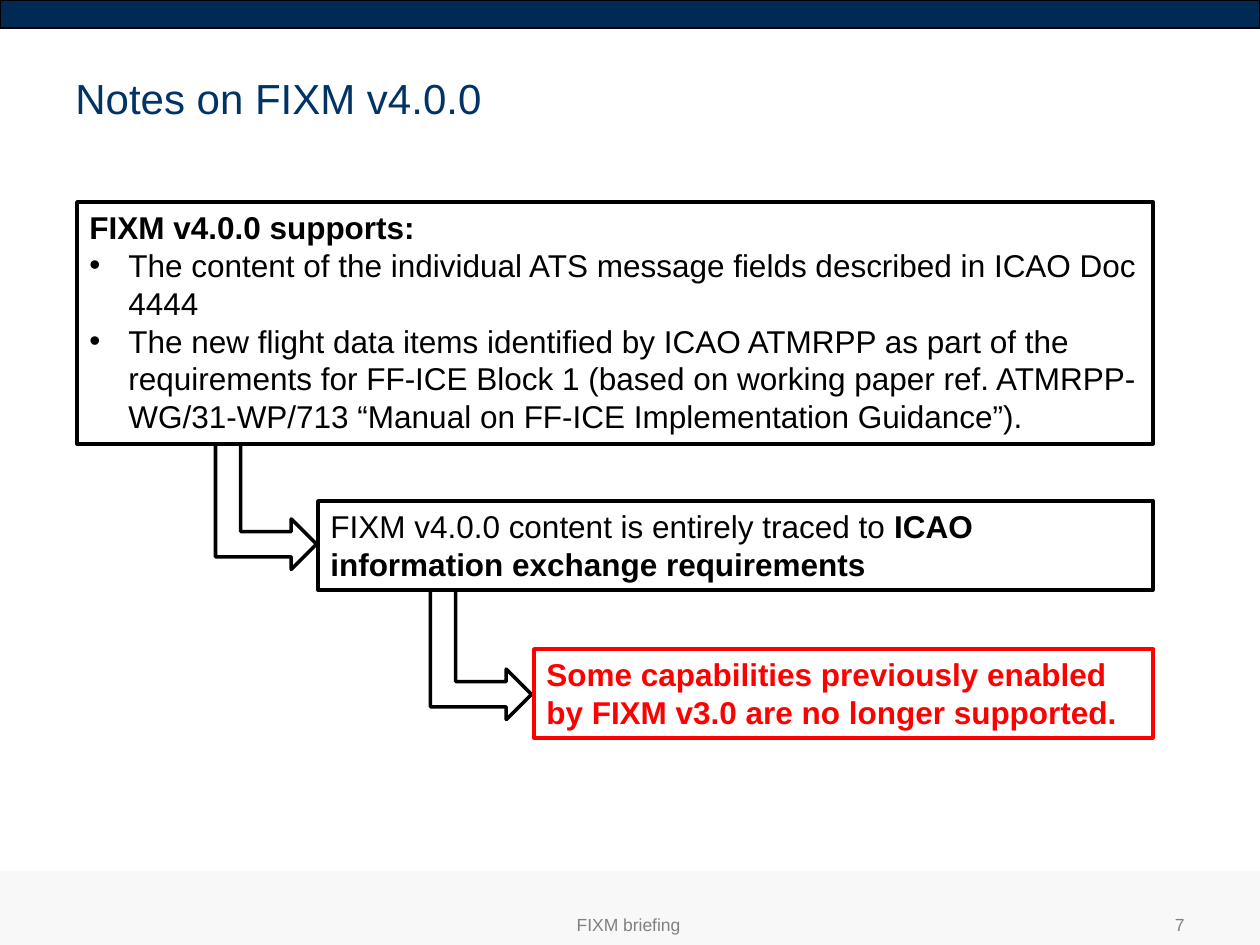
from typing import NamedTuple

from lxml import etree
from pptx import Presentation
from pptx import util as u
from pptx.dml.color import RGBColor
from pptx.enum import shapes, text
from pptx.oxml import ns

PX = 914400 / 126
WIDE, HIGH = 1260, 945


class Theme:
    font = "Arial"
    navy, blue, pale = "002A54", "003366", "F8F8F8"
    black, white, red, gray = "000000", "FFFFFF", "FF0000", "808080"
    title, body, foot = 24, 18, 10
    edge, thin = 2, 0.75
    indent = 39


class Run(NamedTuple):
    words: str
    bold: bool = False


class Para(NamedTuple):
    runs: list[Run]
    bullet: bool = False


class Area(NamedTuple):
    x: int
    y: int
    w: int
    h: int


class Step(NamedTuple):
    area: Area
    color: str
    paras: list[Para]


STEPS = [
    Step(Area(77, 202, 1076, 242), Theme.black, [
        Para([Run("FIXM v4.0.0 supports:", True)]),
        Para([Run("The content of the individual ATS message fields described "
                  "in ICAO Doc 4444")], True),
        Para([Run("The new flight data items identified by ICAO ATMRPP as part "
                  "of the requirements for FF-ICE Block 1 (based on working "
                  "paper ref. ATMRPP-WG/31-WP/713 “Manual on FF-ICE "
                  "Implementation Guidance”).")], True),
    ]),
    Step(Area(318, 501, 835, 89), Theme.black, [
        Para([Run("FIXM v4.0.0 content is entirely traced to "),
              Run("ICAO information exchange requirements", True)]),
    ]),
    Step(Area(534, 649, 619, 89), Theme.red, [
        Para([Run("Some capabilities previously enabled by FIXM v3.0 are no "
                  "longer supported.", True)]),
    ]),
]

# Boxes before rotation by a quarter turn
ARROWS = [Area(203, 456, 126, 101), Area(416, 604, 130, 101)]


def emu(px: int) -> u.Emu:
    return u.Emu(round(px * PX))


def place(area: Area) -> list[u.Emu]:
    return [emu(side) for side in area]


def color(code: str) -> RGBColor:
    return RGBColor.from_string(code)


def draw(slide, kind, area: Area, *, fill=None, line=None, width=Theme.edge):
    shape = slide.shapes.add_shape(kind, *place(area))
    shape.shadow.inherit = False
    if fill:
        shape.fill.solid()
        shape.fill.fore_color.rgb = color(fill)
    else:
        shape.fill.background()
    if line:
        shape.line.color.rgb = color(line)
        shape.line.width = u.Pt(width)
    else:
        shape.line.fill.background()
    return shape


def mark(para) -> None:
    """Give a paragraph a bullet with a hanging indent."""
    props = para._p.get_or_add_pPr()
    props.set("marL", str(emu(Theme.indent)))
    props.set("indent", str(-emu(Theme.indent)))
    face = etree.SubElement(props, ns.qn("a:buFont"))
    face.set("typeface", Theme.font)
    sign = etree.SubElement(props, ns.qn("a:buChar"))
    sign.set("char", "•")


def write(shape, paras: list[Para], *, size: int, ink: str,
          align=text.PP_ALIGN.LEFT, anchor=text.MSO_ANCHOR.TOP) -> None:
    frame = shape.text_frame
    frame.word_wrap = True
    frame.vertical_anchor = anchor
    for index, item in enumerate(paras):
        para = frame.add_paragraph() if index else frame.paragraphs[0]
        para.alignment = align
        if item.bullet:
            mark(para)
        for part in item.runs:
            run = para.add_run()
            run.text = part.words
            run.font.name = Theme.font
            run.font.size = u.Pt(size)
            run.font.bold = part.bold
            run.font.color.rgb = color(ink)


def label(slide, area: Area, words: str, **style) -> None:
    write(slide.shapes.add_textbox(*place(area)), [Para([Run(words)])], **style)


def main() -> None:
    deck = Presentation()
    deck.slide_width, deck.slide_height = emu(WIDE), emu(HIGH)
    slide = deck.slides.add_slide(deck.slide_layouts[6])
    kinds = shapes.MSO_SHAPE

    draw(slide, kinds.RECTANGLE, Area(0, 0, WIDE, 28), fill=Theme.navy,
         line=Theme.black, width=Theme.thin)
    draw(slide, kinds.RECTANGLE, Area(0, 871, WIDE, 74), fill=Theme.pale)
    for area in ARROWS:
        arrow = draw(slide, kinds.BENT_UP_ARROW, area, line=Theme.black)
        arrow.rotation = 90
    for step in STEPS:
        box = draw(slide, kinds.RECTANGLE, step.area, fill=Theme.white,
                   line=step.color)
        write(box, step.paras, size=Theme.body, ink=step.color)

    label(slide, Area(63, 66, 942, 107), "Notes on FIXM v4.0.0",
          size=Theme.title, ink=Theme.blue)
    foot = dict(size=Theme.foot, ink=Theme.gray, anchor=text.MSO_ANCHOR.MIDDLE)
    label(slide, Area(341, 906, 575, 38), "FIXM briefing",
          align=text.PP_ALIGN.CENTER, **foot)
    label(slide, Area(1131, 906, 66, 38), "7",
          align=text.PP_ALIGN.RIGHT, **foot)
    deck.save("out.pptx")


if __name__ == "__main__":
    main()
